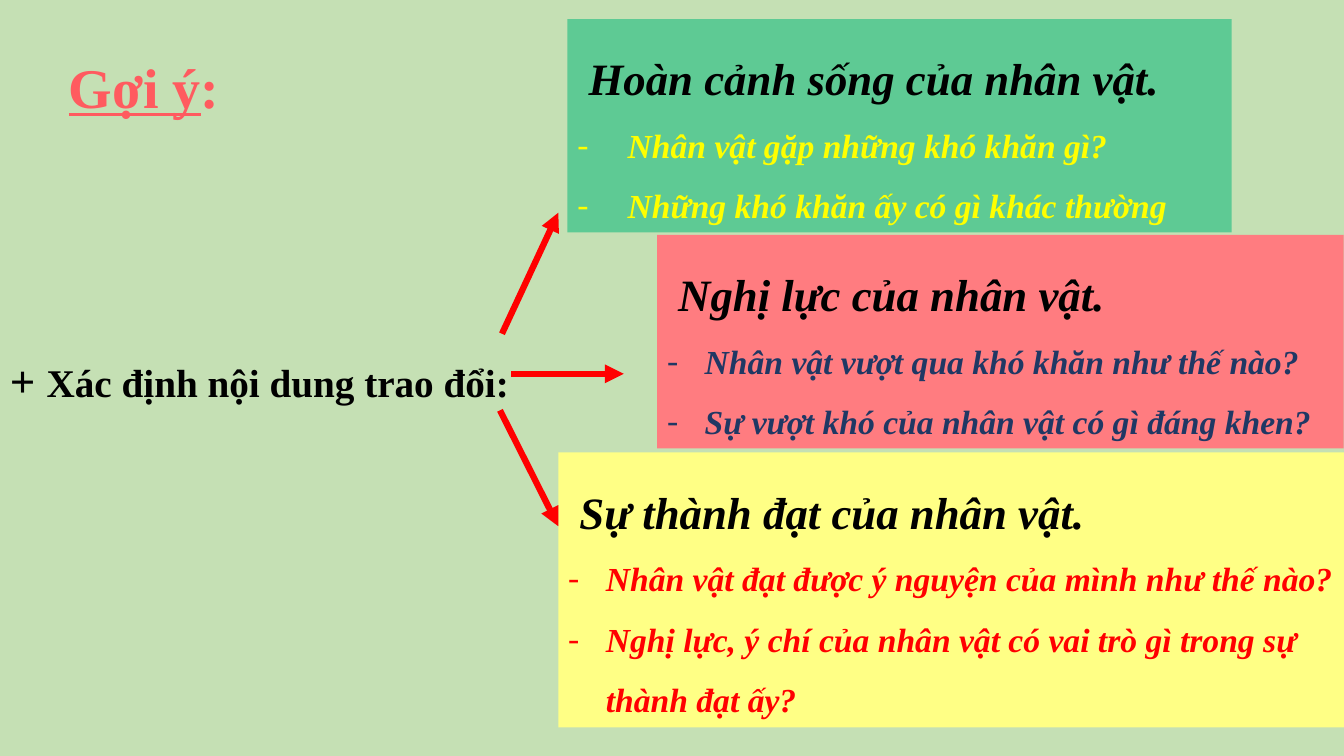
import pptx
import pptx.dml.color
import pptx.enum.shapes
import pptx.enum.text
import pptx.oxml.ns
import pptx.util
from lxml import etree

Cm, Pt = pptx.util.Cm, pptx.util.Pt
RGB = pptx.dml.color.RGBColor
qn = pptx.oxml.ns.qn

SAGE = RGB(0xC5, 0xE0, 0xB4)
CORAL = RGB(0xFF, 0x5B, 0x5F)
PINK = RGB(0xFF, 0x7C, 0x80)
CREAM = RGB(0xFF, 0xFF, 0x85)
GREEN = RGB(0x5E, 0xCA, 0x94)
NAVY = RGB(0x20, 0x38, 0x64)
RED = RGB(0xFF, 0, 0)
YELLOW = RGB(0xFF, 0xFF, 0)
BLACK = RGB(0, 0, 0)

ALIGN = pptx.enum.text.PP_ALIGN


class Board:
    font = "Times New Roman"
    spacing = 1.5
    arrow_width = Pt(4.5)

    def __init__(self, slide):
        self.slide = slide

    def background(self, color):
        fill = self.slide.background.fill
        fill.solid()
        fill.fore_color.rgb = color

    def frame(self, sp):
        tf = sp.text_frame
        settings = {
            "word_wrap": True,
            "auto_size": pptx.enum.text.MSO_AUTO_SIZE.SHAPE_TO_FIT_TEXT,
            "vertical_anchor": pptx.enum.text.MSO_ANCHOR.TOP,
        }
        for name, value in settings.items():
            setattr(tf, name, value)
        return tf

    def paragraph(self, p, runs, align=ALIGN.LEFT):
        """Fill p with runs given as (text, size, colour, format values)."""
        p.alignment = align
        p.line_spacing = self.spacing
        for text, size, color, extra in runs:
            r = p.add_run()
            r.text = text
            style = {"name": self.font, "size": Pt(size), "bold": True, **extra}
            for name, value in style.items():
                setattr(r.font, name, value)
            r.font.color.rgb = color

    def bullet(self, p, indent):
        pPr = p._p.get_or_add_pPr()
        pPr.set("marL", str(Cm(indent)))
        pPr.set("indent", str(-Cm(indent)))
        etree.SubElement(pPr, qn("a:buFont")).set("typeface", self.font)
        etree.SubElement(pPr, qn("a:buChar")).set("char", "-")

    def text(self, box, runs, align=ALIGN.LEFT):
        sp = self.slide.shapes.add_textbox(*map(Cm, box))
        self.paragraph(self.frame(sp).paragraphs[0], runs, align)

    def card(self, box, fill, heading, color, indent, questions):
        sp = self.slide.shapes.add_shape(
            pptx.enum.shapes.MSO_SHAPE.RECTANGLE, *map(Cm, box))
        sp.shadow.inherit = False
        sp.fill.solid()
        sp.fill.fore_color.rgb = fill
        sp.line.fill.background()
        tf = self.frame(sp)
        italic = {"italic": True}
        self.paragraph(tf.paragraphs[0], [
            (" ", 32, BLACK, {"italic": True, "bold": False}),
            (heading, 32, BLACK, italic)])
        for question in questions:
            p = tf.add_paragraph()
            self.bullet(p, indent)
            self.paragraph(p, [(question, 24, color, italic)])

    def arrow(self, start, end):
        line = self.slide.shapes.add_connector(
            pptx.enum.shapes.MSO_CONNECTOR.STRAIGHT, *map(Cm, start + end))
        line.line.color.rgb = RED
        line.line.width = self.arrow_width
        ln = line.line._get_or_add_ln()
        etree.SubElement(ln, qn("a:tailEnd")).set("type", "triangle")
        etree.SubElement(line._element.spPr, qn("a:effectLst"))


def main():
    prs = pptx.Presentation()
    prs.slide_width, prs.slide_height = Cm(33.87), Cm(19.05)
    board = Board(prs.slides.add_slide(prs.slide_layouts[6]))
    board.background(SAGE)

    board.text((0.43, 0.36, 6.76, 2.51), [
        ("Gợi ý", 40, CORAL, {"underline": True}),
        (": ", 40, CORAL, {})], ALIGN.CENTER)
    board.text((0, 8.08, 13.26, 2.31), [
        ("+ ", 32, BLACK, {}),
        ("Xác định nội dung trao đổi:", 28, BLACK, {})])

    board.card((16.56, 5.92, 17.3, 5.38), PINK, "Nghị lực của nhân vật.", NAVY, 0.95, [
        "Nhân vật vượt qua khó khăn như thế nào?",
        "Sự vượt khó của nhân vật có gì đáng khen?"])
    board.card((14.07, 11.4, 19.81, 6.93), CREAM, "Sự thành đạt của nhân vật.", RED, 0.95, [
        "Nhân vật đạt được ý nguyện của mình như thế nào?",
        "Nghị lực, ý chí của nhân vật có vai trò gì trong sự thành đạt ấy?"])
    board.card((14.3, 0.48, 16.74, 5.38), GREEN, "Hoàn cảnh sống của nhân vật.", YELLOW, 1.27, [
        "Nhân vật gặp những khó khăn gì?",
        "Những khó khăn ấy có gì khác thường"])

    for start, end in [((12.88, 9.42), (15.72, 9.42)),
                       ((12.6, 10.34), (14.07, 13.26)),
                       ((12.65, 8.41), (14.07, 5.36))]:
        board.arrow(start, end)

    prs.save("out.pptx")


if __name__ == "__main__":
    main()
